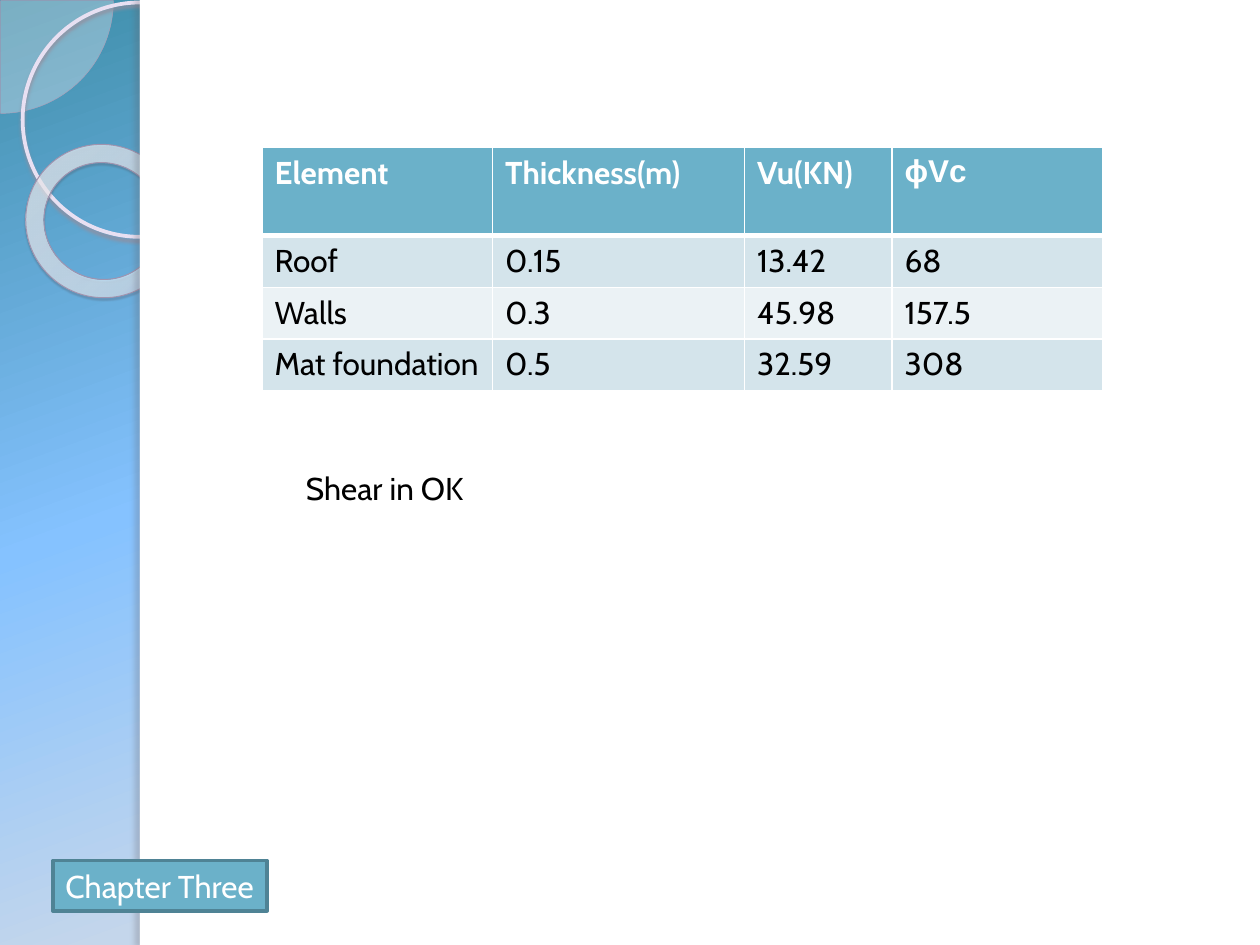
from dataclasses import dataclass

from lxml import etree
from pptx import Presentation
from pptx.dml.color import RGBColor
from pptx.enum.shapes import MSO_SHAPE
from pptx.enum.text import MSO_AUTO_SIZE
from pptx.oxml import parse_xml
from pptx.util import Inches, Pt

PIE, ELLIPSE, DONUT, RECT = (MSO_SHAPE.PIE, MSO_SHAPE.OVAL, MSO_SHAPE.DONUT,
                             MSO_SHAPE.RECTANGLE)
GROW = MSO_AUTO_SIZE.SHAPE_TO_FIT_TEXT
BLANK_LAYOUT = 6
A = "http://schemas.openxmlformats.org/drawingml/2006/main"


@dataclass(frozen=True)
class Theme:
    font: str = "Cabin"
    symbol_font: str = "Arial"
    size: int = 18
    white: str = "FFFFFF"
    black: str = "000000"
    accent: str = "6BB1C9"
    accent_dark: str = "4F8395"
    bands: tuple = ("D4E4EB", "EBF2F5")
    pie: str = "F6F4F9"
    pie_line: str = "ACA0B9"
    ring: str = "E8E0F2"
    ring_shadow: str = "958D9D"
    donut_line: str = "A094AF"
    donut_shadow: str = "4A4550"
    panel_shadow: str = "646068"
    # Gradient stops: position %, colour, opacity %
    sky: tuple = ((0, "3E8EA9", 100), (40, "85C2FF", 100),
                  (70, "C4D6EB", 100), (100, "FFEBFA", 100))
    donut: tuple = ((0, "F9F7FB", 70), (70, "FCFBFE", 55), (100, "B099CA", 60))


def color_xml(color, opacity=100):
    return f'<a:srgbClr val="{color}"><a:alpha val="{opacity * 1000}"/></a:srgbClr>'


def gradient_xml(stops, direction):
    marks = "".join(f'<a:gs pos="{pos * 1000}">{color_xml(color, opacity)}</a:gs>'
                    for pos, color, opacity in stops)
    return parse_xml(f'<a:gradFill xmlns:a="{A}" rotWithShape="1">'
                     f'<a:gsLst>{marks}</a:gsLst>{direction}</a:gradFill>')


class SlideBuilder:
    def __init__(self, slide, theme):
        self.slide, self.theme = slide, theme

    def background(self, stops, angle):
        fill = self.slide.background.fill
        fill.solid()
        solid = self.slide.element.find(f".//{{{A}}}solidFill")
        linear = f'<a:lin ang="{angle * 60000}" scaled="0"/>'
        solid.getparent().replace(solid, gradient_xml(stops, linear))

    def shape(self, kind, box, fill=None, opacity=100, line=None, width=0,
              adjustments=(), shadow=None):
        shape = self.slide.shapes.add_shape(kind, *map(Inches, box))
        shape.shadow.inherit = False
        for index, value in enumerate(adjustments):
            shape.adjustments[index] = value
        if fill:
            shape.fill.solid()
            shape.fill.fore_color.rgb = RGBColor.from_string(fill)
            color = shape.element.spPr.find(f"{{{A}}}solidFill")[0]
            etree.SubElement(color, f"{{{A}}}alpha", val=str(opacity * 1000))
        else:
            shape.fill.background()
        if line:
            shape.line.color.rgb = RGBColor.from_string(line)
            shape.line.width = Pt(width)
        else:
            shape.line.fill.background()
        if shadow:
            self.shadow(shape, *shadow)
        return shape

    def shadow(self, shape, color, opacity, blur, distance, angle):
        effects = shape.element.spPr.find(f"{{{A}}}effectLst")
        effects.append(parse_xml(
            f'<a:outerShdw xmlns:a="{A}" blurRad="{Pt(blur)}" dist="{Pt(distance)}" '
            f'dir="{angle * 60000}" algn="tl" rotWithShape="0">'
            f'{color_xml(color, opacity)}</a:outerShdw>'))

    def radial_fill(self, shape, stops, focus):
        left, top, right, bottom = (edge * 1000 for edge in focus)
        circle = (f'<a:path path="circle"><a:fillToRect l="{left}" t="{top}" '
                  f'r="{right}" b="{bottom}"/></a:path>')
        plain = shape.element.spPr.find(f"{{{A}}}noFill")
        plain.getparent().replace(plain, gradient_xml(stops, circle))

    def set_text(self, frame, text, color, bold=False, font=None):
        frame.text = text
        for run in frame.paragraphs[0].runs:
            run.font.name = font or self.theme.font
            run.font.size = Pt(self.theme.size)
            run.font.bold = bold
            run.font.color.rgb = RGBColor.from_string(color)

    def text(self, box, text, color):
        frame = self.slide.shapes.add_textbox(*map(Inches, box)).text_frame
        frame.word_wrap = True
        frame.auto_size = GROW
        self.set_text(frame, text, color)

    def label(self, box, text, fill, line, width):
        frame = self.shape(RECT, box, fill, line=line, width=width).text_frame
        frame.word_wrap = False
        frame.auto_size = GROW
        self.set_text(frame, text, self.theme.white)

    def borders(self, cell, bottom):
        properties = cell._tc.get_or_add_tcPr()
        for index, (side, width) in enumerate(zip("LRTB", (1, 1, 1, bottom))):
            properties.insert(index, parse_xml(
                f'<a:ln{side} xmlns:a="{A}" w="{Pt(width)}"><a:solidFill>'
                f'{color_xml(self.theme.white)}</a:solidFill></a:ln{side}>'))

    def table(self, box, rows, column_widths, row_heights):
        theme = self.theme
        table = self.slide.shapes.add_table(
            len(rows), len(column_widths), *map(Inches, box)).table
        for column, width in zip(table.columns, column_widths):
            column.width = Inches(width)
        for r, (values, height) in enumerate(zip(rows, row_heights)):
            table.rows[r].height = Inches(height)
            header = r == 0
            fill = theme.accent if header else theme.bands[(r - 1) % 2]
            for c, value in enumerate(values):
                cell = table.cell(r, c)
                cell.fill.solid()
                cell.fill.fore_color.rgb = RGBColor.from_string(fill)
                # The rule under the header is shared with the first body row
                self.borders(cell, bottom=3 if header else 1)
                font = theme.symbol_font if "ɸ" in value else theme.font
                self.set_text(cell.text_frame, value,
                              theme.white if header else theme.black, header, font)


def main():
    theme = Theme()
    deck = Presentation()
    deck.slide_width, deck.slide_height = Inches(10), Inches(7.5)
    page = SlideBuilder(deck.slides.add_slide(deck.slide_layouts[BLANK_LAYOUT]), theme)

    # Sidebar decoration
    page.background(theme.sky, 70)
    page.shape(PIE, (-0.89, -0.89, 1.79, 1.79), theme.pie, 33, theme.pie_line, 0.25,
               adjustments=(0, 54.02))
    page.shape(ELLIPSE, (0.18, 0.02, 1.86, 1.86), line=theme.ring, width=2.15,
               shadow=(theme.ring_shadow, 85, 2, 2, 90))
    donut = page.shape(DONUT, (0.2, 1.15, 1.23, 1.21), line=theme.donut_line,
                       width=0.58, adjustments=(0.12,),
                       shadow=(theme.donut_shadow, 35, 1, 1.2, 75))
    donut.rotation = 38.6
    page.radial_fill(donut, theme.donut, (-408, -50, 508, 150))

    # White content panel and its shaded edge
    page.shape(RECT, (1.11, 0, 8.89, 7.5), theme.white)
    page.shape(RECT, (1.11, 0, 0.08, 7.5), theme.white,
               shadow=(theme.panel_shadow, 25, 3, 3, 180))

    # Shear check table and conclusion
    shear_rows = [
        ("Element", "Thickness(m)", "Vu(KN)", "ɸVc"),
        ("Roof", "0.15", "13.42", "68"),
        ("Walls", "0.3", "45.98", "157.5"),
        ("Mat foundation", "0.5", "32.59", "308"),
    ]
    page.table((2.08, 1.17, 6.67, 1.92), shear_rows,
               (1.83, 2, 1.17, 1.67), (0.7, 0.41, 0.41, 0.41))
    page.text((2.33, 3.67, 6.17, 0.4), "Shear in OK", theme.black)

    # Chapter label
    page.label((0.42, 6.83, 1.7, 0.4), "Chapter Three",
               theme.accent, theme.accent_dark, 2)

    deck.save("out.pptx")


if __name__ == "__main__":
    main()
